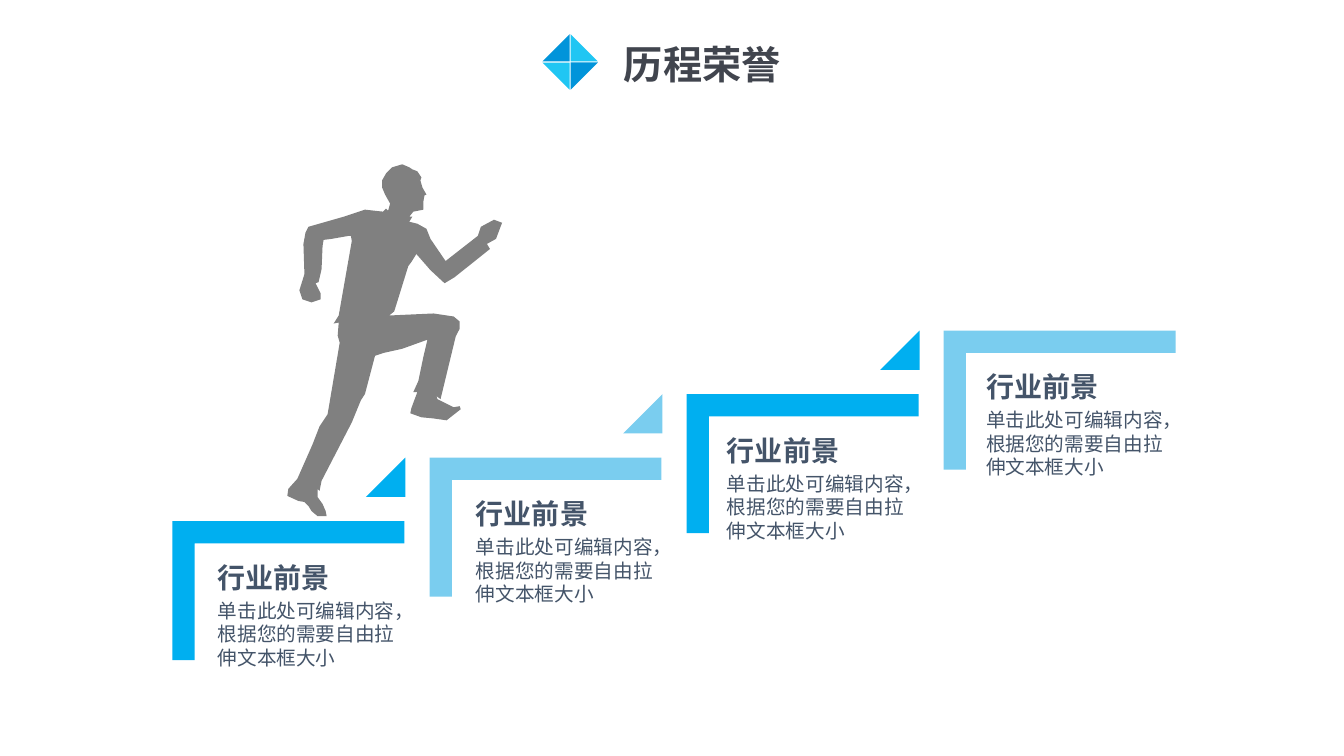
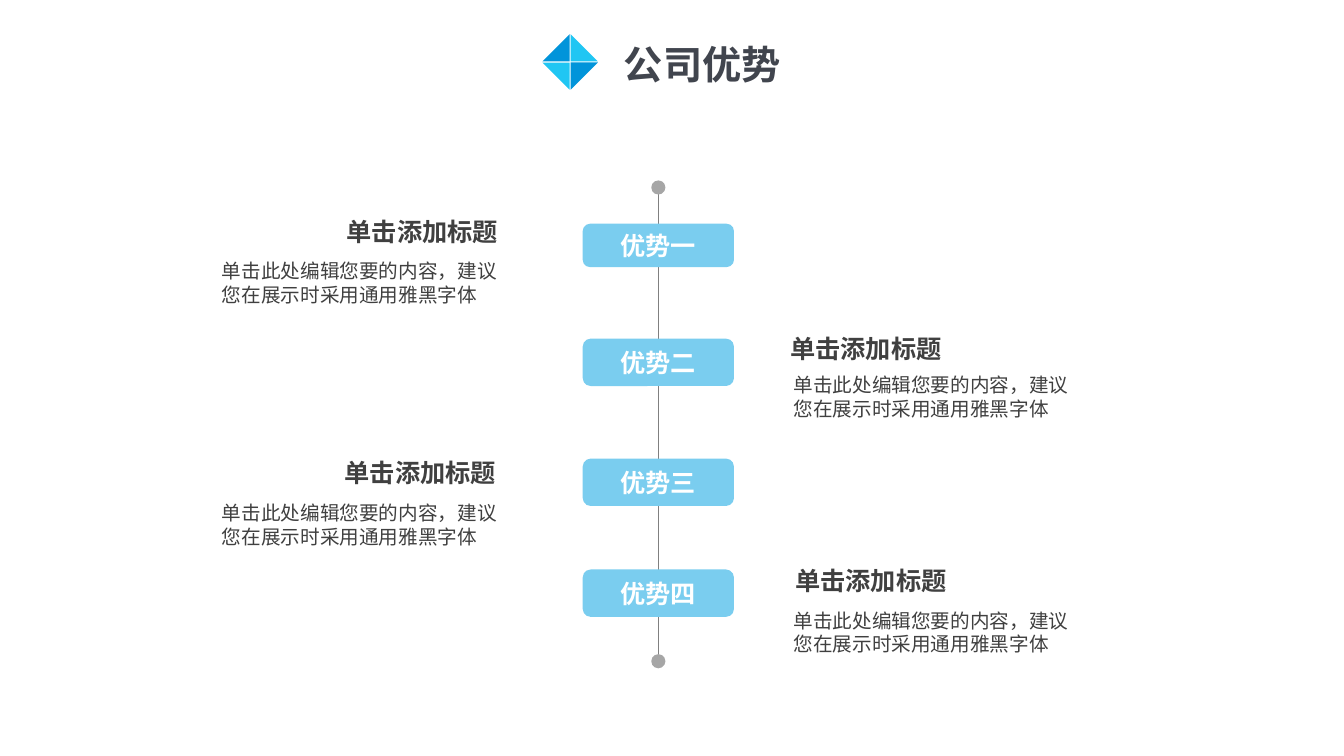
from dataclasses import dataclass

from lxml import etree
from pptx import Presentation
from pptx.dml.color import RGBColor
from pptx.enum.shapes import MSO_CONNECTOR, MSO_SHAPE
from pptx.enum.text import MSO_ANCHOR, MSO_AUTO_SIZE, PP_ALIGN
from pptx.oxml.ns import qn
from pptx.util import Inches, Pt

RIGHT_TRIANGLE = MSO_SHAPE.RIGHT_TRIANGLE
TRIANGLE = MSO_SHAPE.ISOSCELES_TRIANGLE
CORNER = MSO_SHAPE.CORNER
ELLIPSE = MSO_SHAPE.OVAL
ROUNDED = MSO_SHAPE.ROUNDED_RECTANGLE
STRAIGHT = MSO_CONNECTOR.STRAIGHT
MIDDLE = MSO_ANCHOR.MIDDLE
CENTER = PP_ALIGN.CENTER
FIT_SHAPE = MSO_AUTO_SIZE.SHAPE_TO_FIT_TEXT

COLORS = {
    "title": "41454E", "cyan": "20C6F3", "blue": "0194DA",
    "step": "00AFF0", "pale": "7ACDEF", "slate": "445469",
    "runner": "808080", "axis": "808080", "dot": "A6A6A6",
    "body": "404040", "white": "FFFFFF",
}
CJK_FONT = "Noto Sans CJK SC"
LATIN_FONT = "Arial"
LINE_HEIGHT = 1.2

RUNNER_OUTLINE = [
    (490, 218), (477, 225), (474, 234), (442, 259), (427, 237), (423, 227),
    (414, 222), (406, 220), (409, 215), (406, 215), (410, 210), (420, 208),
    (420, 200), (421, 194), (423, 193), (419, 186), (417, 179), (418, 176),
    (416, 173), (414, 170), (409, 168), (406, 166), (399, 163), (389, 166),
    (383, 172), (379, 179), (379, 186), (382, 193), (387, 202), (385, 209),
    (383, 207), (380, 210), (362, 208), (341, 215), (306, 225), (303, 231),
    (301, 242), (302, 272), (297, 288), (300, 297), (309, 300), (318, 297),
    (318, 291), (313, 281), (316, 280), (319, 267), (320, 244), (321, 238),
    (329, 237), (346, 234), (348, 234), (349, 239), (336, 313), (331, 321),
    (336, 320), (335, 333), (337, 340), (325, 411), (317, 423), (310, 441),
    (295, 475), (286, 485), (285, 492), (296, 497), (302, 498), (306, 502),
    (309, 507), (315, 512), (324, 512), (323, 507), (320, 500), (315, 493),
    (315, 485), (317, 487), (319, 477), (349, 419), (358, 397), (362, 391),
    (372, 353), (381, 350), (399, 346), (424, 337), (420, 354), (415, 378),
    (410, 389), (414, 389), (408, 405), (407, 410), (418, 414), (429, 415),
    (443, 417), (457, 406), (456, 403), (450, 404), (434, 396), (433, 393),
    (437, 396), (452, 334), (456, 326), (456, 319), (450, 314), (430, 311),
    (386, 313), (391, 309), (396, 293), (405, 264), (408, 260), (413, 252),
    (427, 268), (441, 281), (451, 275), (486, 247), (483, 242), (492, 237),
    (498, 221),
]


@dataclass(frozen=True)
class Step:
    text_left: float
    color: str


@dataclass(frozen=True)
class Advantage:
    label: str
    chip_top: float
    chip_height: float
    heading_left: float
    heading_top: float
    body_left: float
    body_top: float


STEPS = [Step(2.16, "step"), Step(4.72, "pale"), Step(7.21, "step"), Step(9.78, "pale")]
STEP_LEFT, STEP_TOP = 2.17, 4.71
STEP_RUN, STEP_RISE = 2.55, 0.63
STEP_HEADING = "行业前景"
STEP_BODY = "单击此处可编辑内容，根据您的需要自由拉伸文本框大小"

ADVANTAGES = [
    Advantage("优势一", 2.22, 0.43, 3.34, 2.1, 2.07, 2.5),
    Advantage("优势二", 3.36, 0.47, 7.74, 3.26, 7.74, 3.63),
    Advantage("优势三", 4.55, 0.47, 3.32, 4.49, 2.07, 4.9),
    Advantage("优势四", 5.65, 0.47, 7.79, 5.56, 7.74, 5.97),
]
ADVANTAGE_HEADING = "单击添加标题"
ADVANTAGE_BODY = "单击此处编辑您要的内容，建议您在展示时采用通用雅黑字体"
AXIS_X = 6.53


def color_of(name: str) -> RGBColor:
    return RGBColor.from_string(COLORS[name])


def paint(shape, color: str) -> None:
    shape.shadow.inherit = False
    shape.fill.solid()
    shape.fill.fore_color.rgb = color_of(color)
    shape.line.fill.background()


def add_figure(page, kind, left: float, top: float, width: float, height: float,
               color: str, *, rotation: float = 0, adjustments: tuple = ()):
    shape = page.shapes.add_shape(
        kind, Inches(left), Inches(top), Inches(width), Inches(height))
    paint(shape, color)
    shape.rotation = rotation
    for index, value in enumerate(adjustments):
        shape.adjustments[index] = value
    return shape


def write_text(frame, text: str, *, size: float, color: str, bold: bool = False,
               font: str = CJK_FONT, align=None) -> None:
    para = frame.paragraphs[0]
    para.alignment = align
    para.line_spacing = Pt(size * LINE_HEIGHT)
    span = para.add_run()
    span.text = text
    span.font.size = Pt(size)
    span.font.bold = bold
    span.font.color.rgb = color_of(color)
    span.font.name = font
    east_asian = etree.Element(qn("a:ea"), typeface=CJK_FONT)
    span.font._element.find(qn("a:latin")).addnext(east_asian)


def add_text(page, text: str, left: float, top: float, width: float, height: float,
             *, insets: tuple = (0.1, 0.05), wrap: bool = True, **text_format) -> None:
    box = page.shapes.add_textbox(
        Inches(left), Inches(top), Inches(width), Inches(height))
    frame = box.text_frame
    frame.word_wrap = wrap
    frame.auto_size = FIT_SHAPE
    frame.margin_left = frame.margin_right = Inches(insets[0])
    frame.margin_top = frame.margin_bottom = Inches(insets[1])
    write_text(frame, text, **text_format)


def add_page(deck, title: str):
    page = deck.slides.add_slide(deck.slide_layouts[6])
    facets = [(5.66, 0.34, "cyan", 0), (5.38, 0.34, "blue", 270),
              (5.38, 0.62, "cyan", 180), (5.66, 0.62, "blue", 90)]
    for left, top, color, rotation in facets:
        add_figure(page, RIGHT_TRIANGLE, left, top, 0.27, 0.27, color, rotation=rotation)
    add_text(page, title, 6.09, 0.35, 2.31, 0.57, size=28, color="title", bold=True)
    return page


def add_runner(page) -> None:
    builder = page.shapes.build_freeform(*RUNNER_OUTLINE[0], scale=Inches(0.01))
    builder.add_line_segments(RUNNER_OUTLINE[1:], close=True)
    paint(builder.convert_to_shape(), "runner")


def add_step(page, index: int, step: Step) -> None:
    left = STEP_LEFT + index * STEP_RUN
    top = STEP_TOP - index * STEP_RISE
    add_figure(page, CORNER, left, top, 1.38, 2.3, step.color,
               rotation=90, adjustments=(0.16, 0.16))
    if index < len(STEPS) - 1:
        add_figure(page, TRIANGLE, left + 1.46, top - 0.17, 0.39, 0.39, step.color,
                   adjustments=(1,))
    style = {"insets": (0, 0), "color": "slate", "font": LATIN_FONT}
    add_text(page, STEP_HEADING, step.text_left, top + 0.85, 1.98, 0.34,
             size=20, bold=True, **style)
    add_text(page, STEP_BODY, step.text_left, top + 1.23, 1.85, 0.71, size=14, **style)


def add_axis(page) -> None:
    line = page.shapes.add_connector(
        STRAIGHT, Inches(AXIS_X), Inches(1.86), Inches(AXIS_X), Inches(6.61))
    line.line.color.rgb = color_of("axis")
    line.line.width = Pt(0.5)
    etree.SubElement(line._element.spPr, qn("a:effectLst"))
    for top in (1.79, 6.49):
        add_figure(page, ELLIPSE, AXIS_X - 0.07, top, 0.14, 0.14, "dot")


def add_advantage(page, item: Advantage) -> None:
    chip = add_figure(page, ROUNDED, AXIS_X - 0.75, item.chip_top, 1.5,
                      item.chip_height, "pale")
    chip.text_frame.vertical_anchor = MIDDLE
    write_text(chip.text_frame, item.label, size=18, color="white", bold=True,
               font=LATIN_FONT, align=CENTER)
    add_text(page, ADVANTAGE_HEADING, item.heading_left, item.heading_top, 1.72, 0.4,
             wrap=False, size=18, color="body", bold=True)
    add_text(page, ADVANTAGE_BODY, item.body_left, item.body_top, 3.11, 0.61,
             insets=(0.13, 0.07), size=14, color="body")


def main() -> None:
    deck = Presentation()
    deck.slide_width = Inches(13.33)
    deck.slide_height = Inches(7.5)

    history = add_page(deck, "历程荣誉")
    add_runner(history)
    for index, step in enumerate(STEPS):
        add_step(history, index, step)

    strengths = add_page(deck, "公司优势")
    add_axis(strengths)
    for item in ADVANTAGES:
        add_advantage(strengths, item)

    deck.save("out.pptx")


if __name__ == "__main__":
    main()
